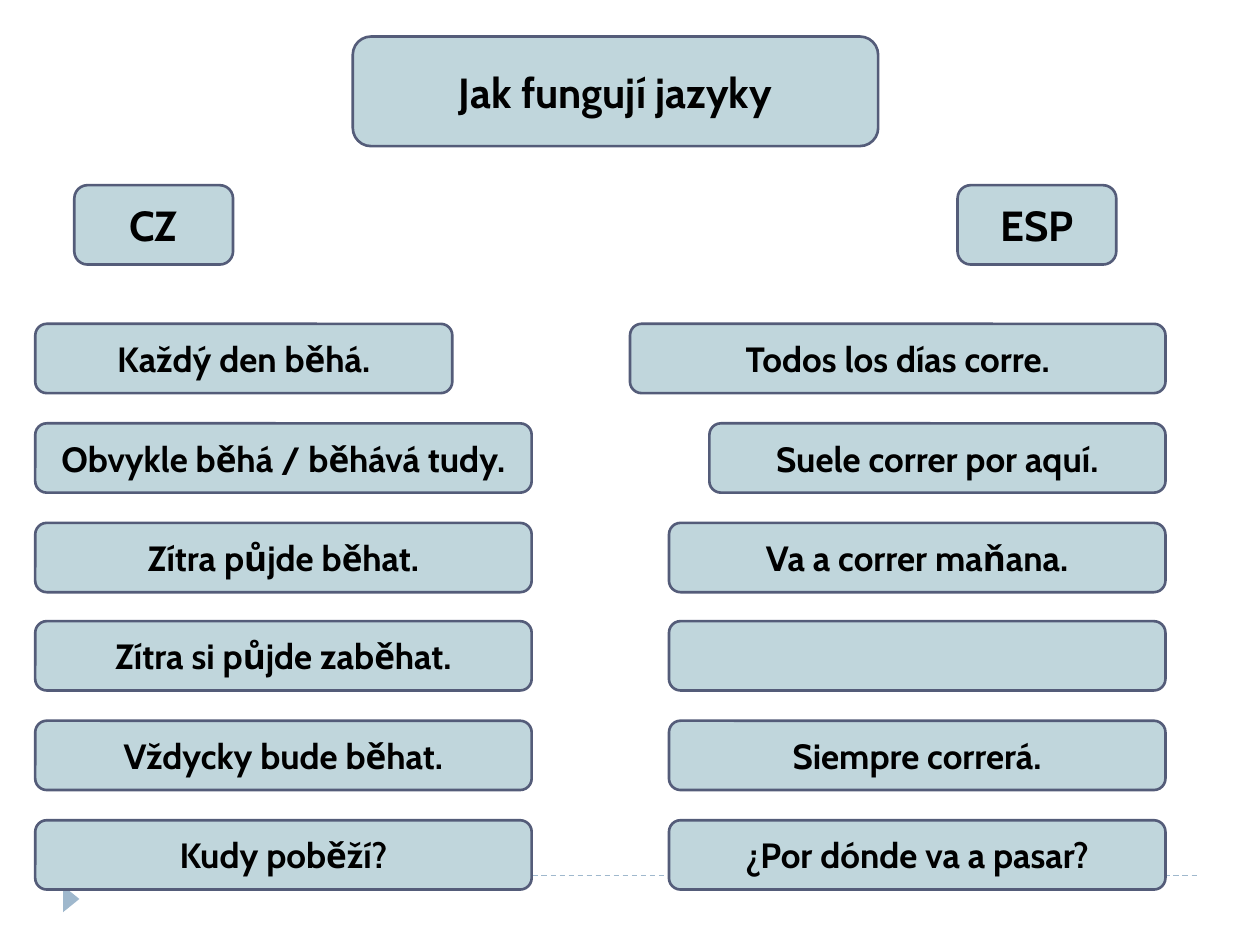
from lxml.etree import SubElement
from pptx import Presentation
from pptx.dml.color import RGBColor
from pptx.enum.dml import MSO_LINE
from pptx.enum.shapes import MSO_CONNECTOR, MSO_SHAPE
from pptx.enum.text import MSO_ANCHOR, PP_ALIGN
from pptx.oxml.ns import qn
from pptx.util import Inches, Pt


def color(hex_code):
    return RGBColor.from_string(hex_code)


def add_box(text, left, top, width, height, size):
    """Add a rounded box with bold centred text; empty text leaves it blank."""
    box = slide.shapes.add_shape(MSO_SHAPE.ROUNDED_RECTANGLE, Inches(left),
                                 Inches(top), Inches(width), Inches(height))
    box.shadow.inherit = False
    box.fill.solid()
    box.fill.fore_color.rgb = color("C0D6DC")
    box.line.color.rgb = color("545C79")
    box.line.width = Pt(1.5)
    if text:
        frame = box.text_frame
        frame.word_wrap = True
        frame.vertical_anchor = MSO_ANCHOR.MIDDLE
        paragraph = frame.paragraphs[0]
        paragraph.text = text
        paragraph.alignment = PP_ALIGN.CENTER
        paragraph.font.name = "Cabin"
        paragraph.font.size = Pt(size)
        paragraph.font.bold = True
        paragraph.font.color.rgb = color("000000")


prs = Presentation()
prs.slide_width, prs.slide_height = Inches(10), Inches(7.5)
slide = prs.slides.add_slide(prs.slide_layouts[6])

# Footer rule and marker
footer_rule = slide.shapes.add_connector(
    MSO_CONNECTOR.STRAIGHT, Inches(0.5), Inches(6.95), Inches(9.5), Inches(6.95))
footer_rule.line.color.rgb = color("9FB8CD")
footer_rule.line.width = Pt(0.75)
footer_rule.line.dash_style = MSO_LINE.DASH
SubElement(footer_rule._element.spPr, qn("a:effectLst"))

marker = slide.shapes.add_shape(MSO_SHAPE.ISOSCELES_TRIANGLE, Inches(0.46),
                                Inches(7.07), Inches(0.21), Inches(0.13))
marker.rotation = 90
marker.shadow.inherit = False
marker.fill.solid()
marker.fill.fore_color.rgb = color("9FB8CD")
marker.line.fill.background()

# Title and language headings
add_box("Jak fungují jazyky", 2.8, 0.29, 4.17, 0.87, 24)
for language, left in [("CZ", 0.59), ("ESP", 7.6)]:
    add_box(language, left, 1.47, 1.26, 0.63, 24)

# Sentence pairs: Czech boxes share a left edge, Spanish ones a right edge
CZECH_LEFT, SPANISH_RIGHT = 0.28, 9.25
FIRST_TOP, ROW_STEP, ROW_HEIGHT = 2.57, 0.788, 0.55
sentence_pairs = [
    ("Každý den běhá.", 3.31, "Todos los días corre.", 4.25),
    ("Obvykle běhá / běhává tudy.", 3.94, "Suele correr por aquí.", 3.62),
    ("Zítra půjde běhat.", 3.94, "Va a correr maňana.", 3.94),
    ("Zítra si půjde zaběhat.", 3.94, "", 3.94),
    ("Vždycky bude běhat.", 3.94, "Siempre correrá.", 3.94),
    ("Kudy poběží?", 3.94, "¿Por dónde va a pasar?", 3.94),
]
for row, (czech, czech_width, spanish, spanish_width) in enumerate(sentence_pairs):
    top = round(FIRST_TOP + row * ROW_STEP, 2)
    add_box(czech, CZECH_LEFT, top, czech_width, ROW_HEIGHT, 20)
    add_box(spanish, SPANISH_RIGHT - spanish_width, top, spanish_width, ROW_HEIGHT, 20)

prs.save("out.pptx")
